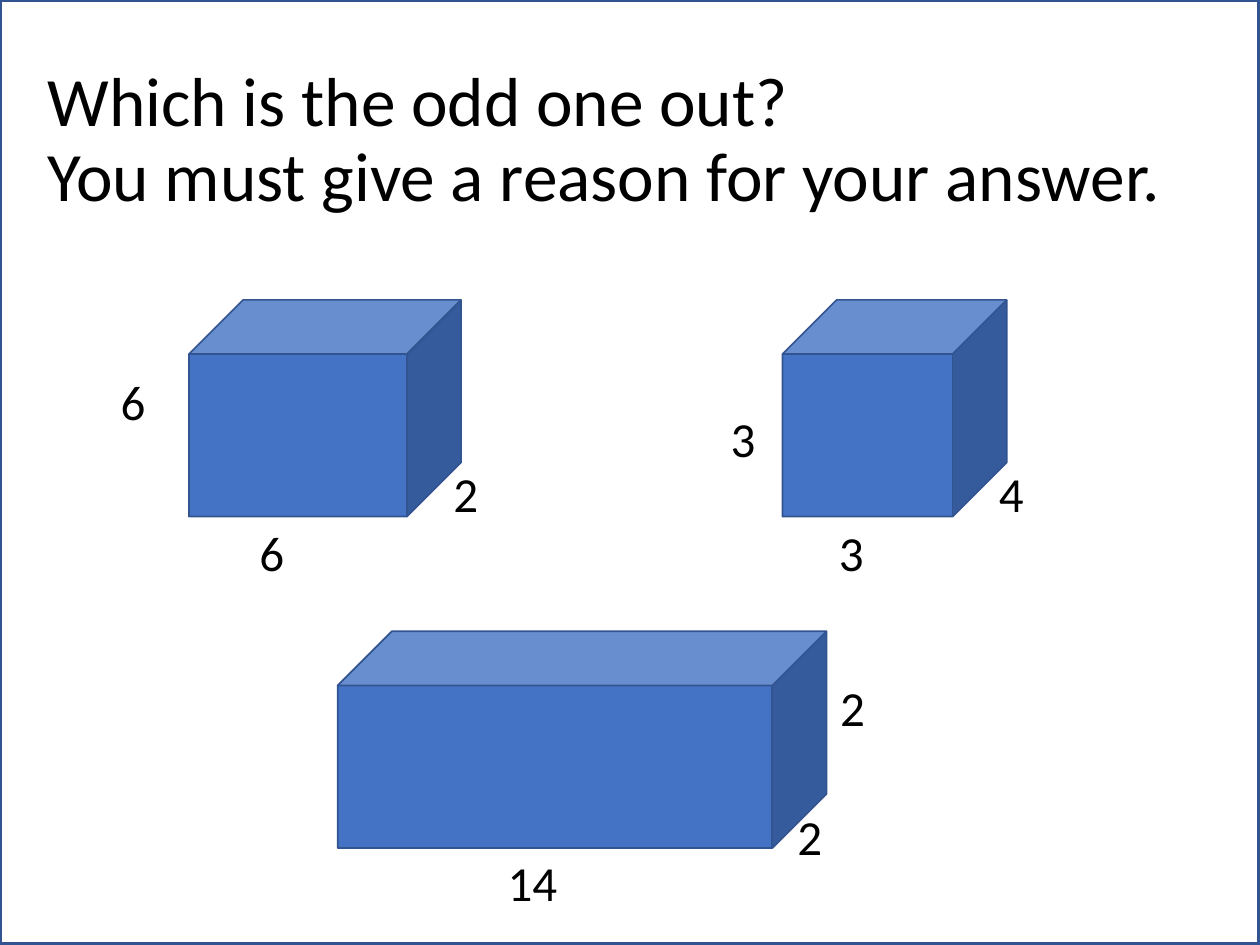
from typing import NamedTuple

from pptx import Presentation
from pptx import util as u
from pptx.dml.color import RGBColor
from pptx.enum import shapes, text

COLORS = {"face": "4472C4", "edge": "325491", "text": "000000"}
FONT = "Calibri"
COLUMNS, ROWS = 100, 75
LABEL_HEIGHT = 5.7
CUBOID_HEIGHT = 17.2


class Label(NamedTuple):
    text: str
    col: float
    row: float
    cols: float = 5.4


class Cuboid(NamedTuple):
    col: float
    row: float
    cols: float
    labels: tuple[Label, ...]


CUBOIDS = (
    Cuboid(15, 23.8, 21.6,
           (Label("6", 8.6, 29), Label("6", 19.6, 41), Label("2", 35, 36.3))),
    Cuboid(26.8, 50.1, 38.8,
           (Label("14", 39.3, 67.2, 9.1), Label("2", 62.3, 63.5), Label("2", 65.7, 53.3))),
    Cuboid(62.1, 23.8, 17.8,
           (Label("3", 57, 31.9), Label("3", 65.6, 41), Label("4", 78.3, 36.3))),
)

prs = Presentation()
prs.slide_width, prs.slide_height = u.Inches(10), u.Inches(7.5)


def box(col: float, row: float, cols: float, rows: float) -> tuple[int, ...]:
    x, y = prs.slide_width / COLUMNS, prs.slide_height / ROWS
    return round(col * x), round(row * y), round(cols * x), round(rows * y)


def write(sp, *lines: str, size: float, spacing: float = 1.0,
          anchor=text.MSO_ANCHOR.TOP, fit=text.MSO_AUTO_SIZE.NONE) -> None:
    tf = sp.text_frame
    tf.word_wrap = True
    tf.auto_size = fit
    tf.vertical_anchor = anchor
    p = tf.paragraphs[0]
    p.alignment = text.PP_ALIGN.LEFT
    p.line_spacing = spacing
    for i, line in enumerate(lines):
        if i:
            p.add_line_break()
        r = p.add_run()
        r.text = line
        r.font.name = FONT
        r.font.size = u.Pt(size)
        r.font.color.rgb = RGBColor.from_string(COLORS["text"])


def add_outlined(slide, kind, area: tuple[int, ...], width: float,
                 fill: str | None = None) -> None:
    sp = slide.shapes.add_shape(kind, *area)
    sp.shadow.inherit = False
    if fill:
        sp.fill.solid()
        sp.fill.fore_color.rgb = RGBColor.from_string(COLORS[fill])
    else:
        sp.fill.background()
    sp.line.color.rgb = RGBColor.from_string(COLORS["edge"])
    sp.line.width = u.Pt(width)


def add_label(slide, label: Label) -> None:
    sp = slide.shapes.add_textbox(*box(label.col, label.row, label.cols, LABEL_HEIGHT))
    write(sp, label.text, size=28, fit=text.MSO_AUTO_SIZE.SHAPE_TO_FIT_TEXT)


def main() -> None:
    slide = prs.slides.add_slide(prs.slide_layouts[5])
    title = slide.shapes.title
    title.left, title.top, title.width, title.height = box(2.8, 4, 93, 14.5)
    write(title, "Which is the odd one out?", "You must give a reason for your answer.",
          size=39.6, spacing=0.9, anchor=text.MSO_ANCHOR.MIDDLE)

    for cuboid in CUBOIDS:
        area = box(cuboid.col, cuboid.row, cuboid.cols, CUBOID_HEIGHT)
        add_outlined(slide, shapes.MSO_SHAPE.CUBE, area, 1, fill="face")
    for cuboid in CUBOIDS:
        for label in cuboid.labels:
            add_label(slide, label)

    add_outlined(slide, shapes.MSO_SHAPE.RECTANGLE, box(0, 0, COLUMNS, ROWS), 2.75)
    prs.save("out.pptx")


if __name__ == "__main__":
    main()
